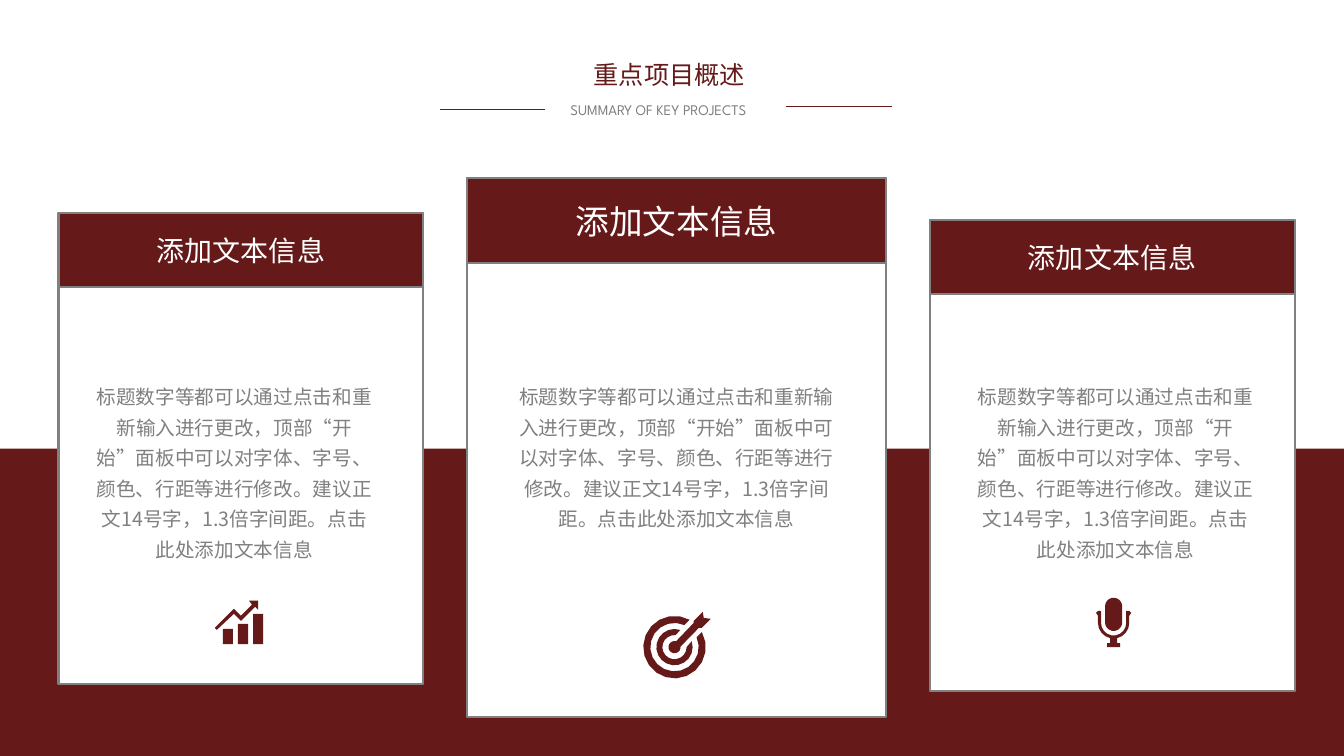
from math import ceil, cos, radians, sin

from lxml.etree import SubElement
from pptx import Presentation
from pptx.dml.color import RGBColor
from pptx.enum.shapes import MSO_CONNECTOR, MSO_SHAPE as Preset
from pptx.enum.text import MSO_ANCHOR as Anchor, MSO_AUTO_SIZE as AutoSize, PP_ALIGN as Align
from pptx.oxml.ns import qn
from pptx.util import Inches, Pt

MAROON = RGBColor(0x65, 0x19, 0x19)
GRAY = RGBColor(0x80, 0x80, 0x80)
WHITE = RGBColor(0xFF, 0xFF, 0xFF)
CHINESE_FONT = "Noto Sans CJK SC"
LATIN_FONT = "League Spartan"
CARD_TITLE = "添加文本信息"
CARD_BODY = (
    "标题数字等都可以通过点击和重新输入进行更改，顶部“开始”面板中可以对字体、字号、"
    "颜色、行距等进行修改。建议正文14号字，1.3倍字间距。点击此处添加文本信息"
)


def write_text(shape, text, size, color, font=CHINESE_FONT, align=None,
               anchor=Anchor.TOP, line_spacing=None):
    frame = shape.text_frame
    frame.word_wrap = True
    frame.vertical_anchor = anchor
    paragraph = frame.paragraphs[0]
    paragraph.alignment = align
    paragraph.line_spacing = line_spacing
    run = paragraph.add_run()
    run.text = text
    run.font.size = Pt(size)
    run.font.name = font
    run.font.color.rgb = color
    # East Asian characters take their typeface from a separate element
    SubElement(run.font._element, qn("a:ea"), typeface=font)


def add_text(parent, box, text, **text_format):
    textbox = parent.shapes.add_textbox(*map(Inches, box))
    write_text(textbox, text, **text_format)
    textbox.text_frame.auto_size = AutoSize.SHAPE_TO_FIT_TEXT


def paint(shape, fill, outline=None):
    shape.shadow.inherit = False
    shape.fill.solid()
    shape.fill.fore_color.rgb = fill
    if outline is None:
        shape.line.fill.background()
    else:
        shape.line.color.rgb = outline
        shape.line.width = Pt(1.5)


def add_rectangle(slide, box, fill, outline=None):
    shape = slide.shapes.add_shape(Preset.RECTANGLE, *map(Inches, box))
    paint(shape, fill, outline)
    return shape


def add_icon_outline(slide, left, top, contours):
    """Draw all contours as one shape, with points relative to left and top."""
    placed = [[(Inches(left + x), Inches(top + y)) for x, y in contour]
              for contour in contours]
    builder = slide.shapes.build_freeform(*placed[0][0], scale=1.0)
    for index, contour in enumerate(placed):
        if index:
            builder.move_to(*contour[0])
        builder.add_line_segments(contour[1:], close=True)
    paint(builder.convert_to_shape(), MAROON)


def arc(center_x, center_y, radius, start, end):
    steps = ceil(abs(end - start) / 20)
    angles = [radians(start + (end - start) * i / steps) for i in range(steps + 1)]
    return [(center_x + radius * cos(a), center_y + radius * sin(a)) for a in angles]


def add_rule(parent, left, top, width):
    rule = parent.shapes.add_connector(
        MSO_CONNECTOR.STRAIGHT, *map(Inches, (left + width, top, left, top)))
    rule.line.color.rgb = MAROON
    rule.line.width = Pt(0.5)
    SubElement(rule._element.spPr, qn("a:effectLst"))


def add_heading(slide, left, top):
    group = slide.shapes.add_group_shape()
    add_text(group, (left + 1.43, top, 2.22, 0.4), "重点项目概述", size=18, color=MAROON)
    add_text(group, (left + 1.2, top + 0.41, 2.21, 0.28), "SUMMARY OF KEY PROJECTS",
             size=10.5, color=GRAY, font=LATIN_FONT)
    add_rule(group, left, top + 0.55, 1.05)
    add_rule(group, left + 3.44, top + 0.52, 1.05)


def add_chart_icon(slide, left, top):
    arrow = [
        (0.26, 0.2), (0.19, 0.13), (0.02, 0.29), (0, 0.27), (0.19, 0.08), (0.26, 0.15),
        (0.37, 0.04), (0.34, 0), (0.43, 0), (0.43, 0.09), (0.4, 0.06)]
    # Bars on a common baseline
    bars = [[(x, 0.43), (x + 0.1, 0.43), (x + 0.1, y), (x, y)]
            for x, y in ((0.08, 0.28), (0.23, 0.23), (0.38, 0.13))]
    add_icon_outline(slide, left, top, [arrow, *bars])


def add_target_icon(slide, left, top):
    center = (0.31, 0.35)
    # Rings, open towards the dart
    outer_ring = arc(*center, 0.31, -29, 299) + arc(*center, 0.24, 294, -24)
    inner_ring = arc(*center, 0.18, -19, 289) + arc(*center, 0.12, 275, 0)
    # Dart that ends in the bullseye
    dart = [(0.59, 0), (0.6, 0.06), (0.67, 0.07), (0.58, 0.16), (0.55, 0.16),
            *arc(*center, 0.06, -5, 285), (0.5, 0.11), (0.5, 0.09)]
    add_icon_outline(slide, left, top, [outer_ring, inner_ring, dart])


def add_microphone_icon(slide, left, top):
    center = (0.175, 0.25)
    # Cradle, stem and foot
    stand = [
        (0.02, 0.13), (0.05, 0.13), *arc(*center, 0.125, 180, 0), (0.3, 0.13),
        (0.33, 0.13), (0.35, 0.15), (0.33, 0.18), *arc(*center, 0.155, 0, 77),
        (0.21, 0.45), (0.24, 0.45), (0.24, 0.49), (0.11, 0.49), (0.11, 0.45),
        (0.14, 0.45), *arc(*center, 0.155, 103, 180), (0.02, 0.18), (0, 0.15)]
    capsule = arc(0.175, 0.085, 0.085, 180, 360) + arc(0.175, 0.245, 0.085, 0, 180)
    add_icon_outline(slide, left, top, [stand, capsule])


def add_card(slide, box, header_height, title_size, body_box, add_icon, icon_offset):
    left, top, width, _ = box
    add_rectangle(slide, box, WHITE, outline=GRAY)
    header = add_rectangle(slide, (left, top, width, header_height), MAROON, outline=GRAY)
    write_text(header, CARD_TITLE, size=title_size, color=WHITE,
               align=Align.CENTER, anchor=Anchor.MIDDLE)
    body_left, body_top, body_width, body_height = body_box
    add_text(slide, (left + body_left, top + body_top, body_width, body_height), CARD_BODY,
             size=14, color=GRAY, align=Align.CENTER, line_spacing=1.3)
    icon_left, icon_top = icon_offset
    add_icon(slide, left + icon_left, top + icon_top)


def main():
    presentation = Presentation()
    presentation.slide_width = Inches(13.33)
    presentation.slide_height = Inches(7.5)
    slide = presentation.slides.add_slide(presentation.slide_layouts[6])

    add_heading(slide, 4.36, 0.54)
    # Lower band behind the cards
    add_rectangle(slide, (0, 4.45, 13.33, 3.05), MAROON)
    # Cards: body boxes and icons are placed from each card's corner
    add_card(slide, (0.58, 2.11, 3.62, 4.68), 0.74, 20,
             (0.28, 1.59, 2.93, 1.91), add_chart_icon, (1.55, 3.85))
    add_card(slide, (4.63, 1.77, 4.16, 5.34), 0.84, 24,
             (0.39, 1.93, 3.38, 1.6), add_target_icon, (1.75, 4.3))
    add_card(slide, (9.22, 2.18, 3.62, 4.68), 0.74, 20,
             (0.38, 1.52, 2.93, 1.91), add_microphone_icon, (1.65, 3.75))

    presentation.save("out.pptx")


if __name__ == "__main__":
    main()
